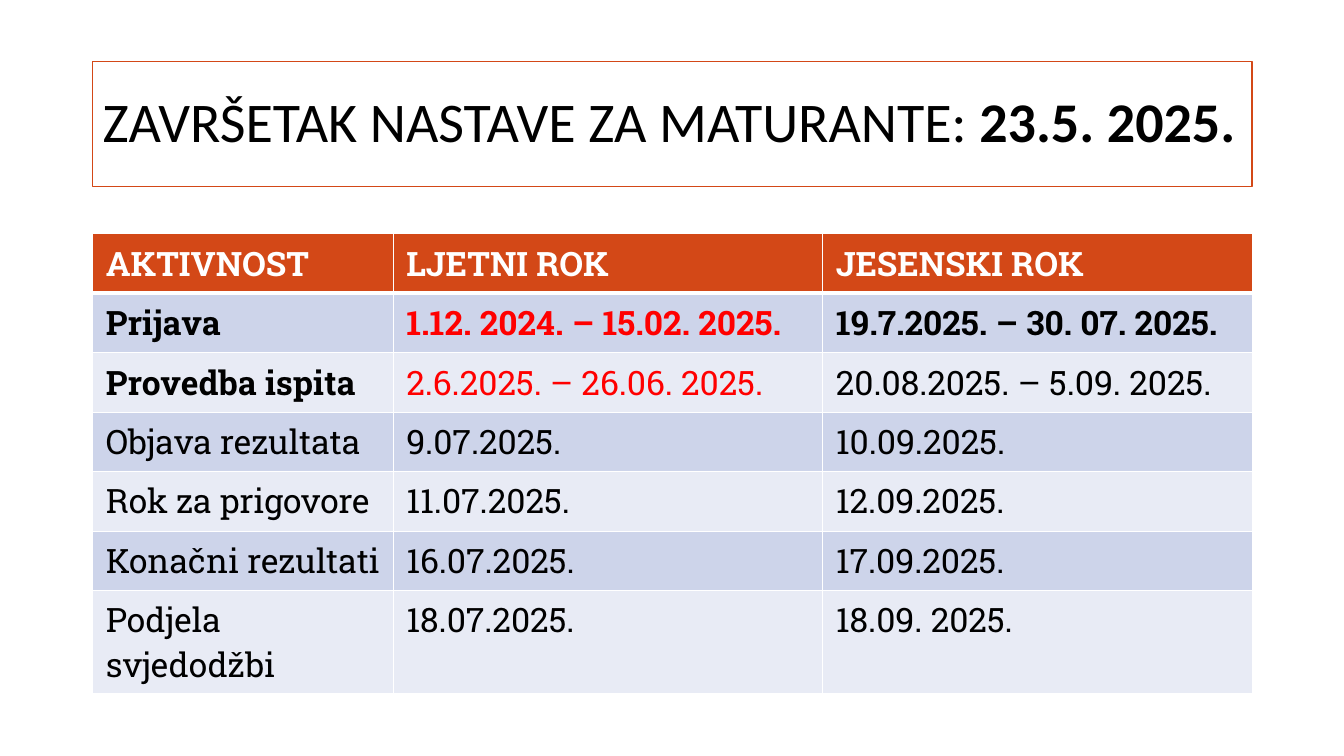
from lxml.etree import SubElement
from pptx import Presentation
from pptx.dml.color import RGBColor
from pptx.enum.shapes import MSO_SHAPE
from pptx.enum.text import MSO_ANCHOR, PP_ALIGN
from pptx.oxml.ns import qn
from pptx.util import Inches, Pt

ORANGE = RGBColor(0xD3, 0x48, 0x17)
BLUE_BAND = RGBColor(0xCD, 0xD4, 0xEA)
PALE_BAND = RGBColor(0xE8, 0xEB, 0xF5)
WHITE = RGBColor(0xFF, 0xFF, 0xFF)
BLACK = RGBColor(0, 0, 0)
RED = RGBColor(0xFF, 0, 0)

TITLE = "ZAVRŠETAK NASTAVE ZA MATURANTE: "
TITLE_DATE = "23.5. 2025."
SCHEDULE = [
    ("AKTIVNOST", "LJETNI ROK", "JESENSKI ROK"),
    ("Prijava", "1.12. 2024. – 15.02. 2025.", "19.7.2025. – 30. 07. 2025."),
    ("Provedba ispita", "2.6.2025. – 26.06. 2025.", "20.08.2025. – 5.09. 2025."),
    ("Objava rezultata", "9.07.2025.", "10.09.2025."),
    ("Rok za prigovore", "11.07.2025.", "12.09.2025."),
    ("Konačni rezultati", "16.07.2025.", "17.09.2025."),
    ("Podjela svjedodžbi", "18.07.2025.", "18.09. 2025."),
]
BOLD_CELLS = {(0, 0), (0, 1), (0, 2), (1, 0), (1, 1), (1, 2), (2, 0)}
RED_CELLS = {(1, 1), (2, 1)}

LEFT, WIDTH = 0.92, 11.5
COL_WIDTHS = (2.98, 4.26, 4.26)
ROW_HEIGHT = 0.59


def add_text(p, text, *, size, font, color=BLACK, bold=False):
    r = p.add_run()
    r.text = text
    r.font.size = Pt(size)
    r.font.name = font
    r.font.bold = bold
    r.font.color.rgb = color


def set_borders(cell, bottom, top):
    """Draw white cell borders; widths in points."""
    tc_pr = cell._tc.get_or_add_tcPr()
    for side, width in (("L", 1), ("R", 1), ("T", top), ("B", bottom)):
        ln = SubElement(tc_pr, qn(f"a:ln{side}"), w=str(Pt(width)))
        fill = SubElement(ln, qn("a:solidFill"))
        SubElement(fill, qn("a:srgbClr"), val=str(WHITE))


def add_title(slide):
    sp = slide.shapes.add_shape(MSO_SHAPE.RECTANGLE, Inches(LEFT), Inches(0.61),
                                Inches(WIDTH), Inches(1.24))
    sp.shadow.inherit = False
    sp.fill.solid()
    sp.fill.fore_color.rgb = WHITE
    sp.line.color.rgb = ORANGE
    sp.line.width = Pt(1)
    tf = sp.text_frame
    tf.word_wrap = True
    tf.vertical_anchor = MSO_ANCHOR.MIDDLE
    p = tf.paragraphs[0]
    p.alignment = PP_ALIGN.LEFT
    p.line_spacing = 0.9
    add_text(p, TITLE, size=40, font="Calibri")
    add_text(p, TITLE_DATE, size=40, font="Calibri", bold=True)


def add_schedule(slide):
    table = slide.shapes.add_table(
        len(SCHEDULE), len(COL_WIDTHS), Inches(LEFT), Inches(2.32),
        Inches(WIDTH), Inches(ROW_HEIGHT * len(SCHEDULE))).table
    for column, width in zip(table.columns, COL_WIDTHS):
        column.width = Inches(width)
    for i, row in enumerate(SCHEDULE):
        table.rows[i].height = Inches(ROW_HEIGHT)
        band = ORANGE if i == 0 else BLUE_BAND if i % 2 else PALE_BAND
        for j, text in enumerate(row):
            cell = table.cell(i, j)
            cell.margin_left = cell.margin_right = Inches(0.13)
            cell.margin_top = cell.margin_bottom = Inches(0.07)
            set_borders(cell, bottom=3 if i == 0 else 1, top=3 if i == 1 else 1)
            cell.fill.solid()
            cell.fill.fore_color.rgb = band
            color = WHITE if i == 0 else RED if (i, j) in RED_CELLS else BLACK
            add_text(cell.text_frame.paragraphs[0], text, size=24,
                     font="Roboto Slab", color=color, bold=(i, j) in BOLD_CELLS)


def main():
    prs = Presentation()
    prs.slide_width, prs.slide_height = Inches(13.33), Inches(7.5)
    slide = prs.slides.add_slide(prs.slide_layouts[6])
    add_title(slide)
    add_schedule(slide)
    prs.save("out.pptx")


if __name__ == "__main__":
    main()
